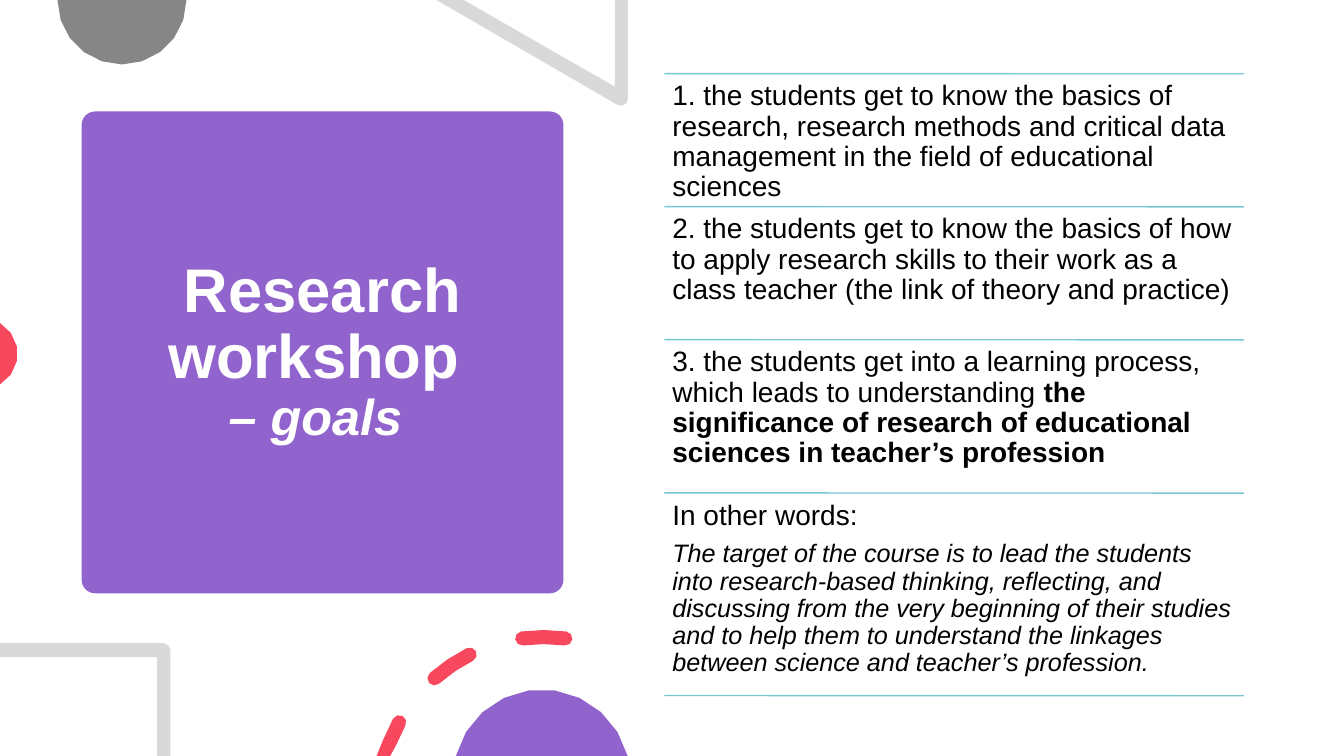
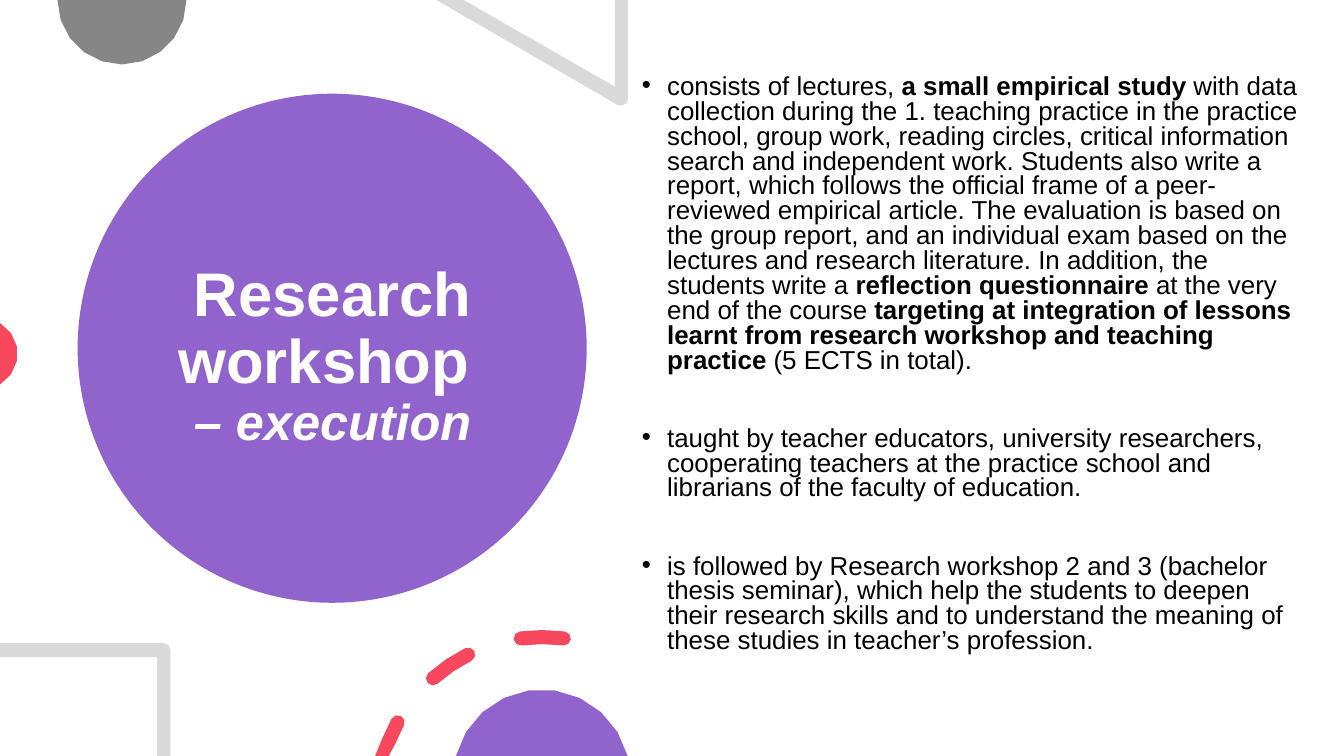
from itertools import accumulate
from math import ceil, cos, radians, sin, sqrt

from lxml.etree import SubElement
from pptx import Presentation
from pptx.dml.color import RGBColor
from pptx.enum.shapes import MSO_CONNECTOR as Connector, MSO_SHAPE as Preset
from pptx.enum.text import MSO_ANCHOR as Anchor, PP_ALIGN as Align
from pptx.oxml.ns import qn
from pptx.util import Inches, Pt

# Grid: one cell is a tenth of an inch, 133.33 columns by 75 rows.
CELL = Inches(0.1)
COLUMNS, ROWS = 133.33, 75

FONT = "Arial"
BLACK = RGBColor(0x00, 0x00, 0x00)
WHITE = RGBColor(0xFF, 0xFF, 0xFF)
PURPLE = RGBColor(0x90, 0x63, 0xCD)
RED = RGBColor(0xF8, 0x48, 0x5E)
GREY = RGBColor(0x86, 0x86, 0x86)
PALE_GREY = RGBColor(0xD9, 0xD9, 0xD9)
TEAL = RGBColor(0x78, 0xC8, 0xD2)

BULLET_INDENT = 2.5
RULE_TILT = 0.02
GOALS = [
    (13.2, [[("1. the students get to know the basics of research, research methods "
              "and critical data management in the field of educational sciences", {})]]),
    (13.2, [[("2. the students get to know the basics of how to apply research skills to "
              "their work as a class teacher (the link of theory and practice)", {})]]),
    (15.2, [[("3. the students get into a learning process, which leads to understanding ", {}),
             ("the significance of research of educational sciences in teacher’s profession",
              {"bold": True})]]),
    (20.1, [[("In other words:", {})],
            [("The target of the course is to lead the students into research-based thinking, "
              "reflecting, and discussing from the very beginning of their studies and to help "
              "them to understand the linkages between science and teacher’s profession.",
              {"size": 18, "italic": True})]]),
]
EXECUTION = [
    [("consists of lectures, ", {}),
     ("a small empirical study ", {"bold": True}),
     ("with data collection during the 1. teaching practice in the practice school, group work, "
      "reading circles, critical information search and independent work. Students also write a "
      "report, which follows the official frame of a peer-reviewed empirical article. The "
      "evaluation is based on the group report, and an individual exam based on the lectures and "
      "research literature. In addition, the students write a ", {}),
     ("reflection questionnaire ", {"bold": True}),
     ("at the very end of the course ", {}),
     ("targeting at integration of lessons learnt from research workshop and teaching practice ",
      {"bold": True}),
     ("(5 ECTS in total).", {})],
    [("taught by teacher educators, university researchers, cooperating teachers at the practice "
      "school and librarians of the faculty of education.", {})],
    [("is followed by Research workshop 2 and 3 (bachelor thesis seminar), which help the "
      "students to deepen their research skills and to understand the meaning of these studies "
      "in teacher’s profession.", {})],
]


def cells(*counts):
    return [round(count * CELL) for count in counts]


def arc(x, y, radius, start, end):
    """Points on a circle, angles in degrees, clockwise; larger circles get finer steps."""
    steps = max(1, ceil(abs(end - start) * sqrt(radius) / 50))
    angles = [radians(start + (end - start) * step / steps) for step in range(steps + 1)]
    return [(x + radius * cos(angle), y + radius * sin(angle)) for angle in angles]


def dash(x, y, radius, start, end, half=0.7):
    """Round-ended piece of a ring, cut off at the foot of the slide."""
    first, *_, last = arc(x, y, radius, start, end)
    outline = arc(*last, half, end, end + 180) + arc(*first, half, start + 180, start + 360)
    outline[:0] = arc(x, y, radius + half, start, end)[1:-1]
    middle = len(outline) - len(arc(*first, half, start + 180, start + 360))
    outline[middle:middle] = arc(x, y, radius - half, end, start)[1:-1]
    return [(column, min(row, ROWS)) for column, row in outline]


def write(para, text, *, size, color=BLACK, bold=False, italic=False):
    """Adds a span; each newline becomes a line break."""
    for index, part in enumerate(text.split("\n")):
        if index:
            para.add_line_break()
        if part:
            span = para.add_run()
            span.text = part
            font = span.font
            font.name, font.size, font.color.rgb = FONT, Pt(size), color
            font.bold, font.italic = bold, italic


class Workshop:
    def __init__(self):
        self.deck = Presentation()
        self.deck.slide_width, self.deck.slide_height = cells(COLUMNS, ROWS)
        self.page = None

    def add_page(self):
        self.page = self.deck.slides.add_slide(self.deck.slide_layouts[6])

    def paint(self, shape, color):
        shape.shadow.inherit = False
        shape.fill.solid()
        shape.fill.fore_color.rgb = color
        shape.line.fill.background()

    def panel(self, preset, *place, corner=None):
        shape = self.page.shapes.add_shape(preset, *cells(*place))
        if corner is not None:
            shape.adjustments[0] = corner
        self.paint(shape, PURPLE)

    def outline(self, color, *contours):
        first, *others = [[cells(*point) for point in contour] for contour in contours]
        builder = self.page.shapes.build_freeform(*first[0])
        builder.add_line_segments(first[1:])
        for contour in others:
            builder.move_to(*contour[0])
            builder.add_line_segments(contour[1:])
        self.paint(builder.convert_to_shape(), color)

    def rule(self, left, right, row):
        line = self.page.shapes.add_connector(
            Connector.STRAIGHT, *cells(left, row, right, row + RULE_TILT))
        line.line.color.rgb = TEAL
        line.line.width = Pt(1)
        SubElement(line._element.spPr, qn("a:effectLst"))

    def text(self, paragraphs, *place, size, color=BLACK, bold=False, spacing=0.9, before=0,
             after=0, align=Align.LEFT, anchor=Anchor.TOP, inset=None, bullets=False):
        frame = self.page.shapes.add_textbox(*cells(*place)).text_frame
        frame.word_wrap = True
        frame.vertical_anchor = anchor
        if inset is not None:
            frame.margin_left = frame.margin_right = cells(inset)[0]
            frame.margin_top = frame.margin_bottom = cells(inset)[0]
        for index, spans in enumerate(paragraphs):
            para = frame.add_paragraph() if index else frame.paragraphs[0]
            if bullets:
                props = para._p.get_or_add_pPr()
                indent = cells(BULLET_INDENT)[0]
                props.set("marL", str(indent))
                props.set("indent", str(-indent))
                SubElement(props, qn("a:buFont"), typeface=FONT)
                SubElement(props, qn("a:buChar"), char="•")
            para.alignment = align
            para.line_spacing = spacing
            para.space_before = Pt(before if index else 0)
            para.space_after = Pt(after)
            for words, changes in spans:
                write(para, words, **{"size": size, "color": color, "bold": bold, **changes})

    def title(self, name, subtitle, *place):
        self.text([[(name, {}), (subtitle, {"size": 36, "italic": True})]], *place, size=44,
                  color=WHITE, bold=True, align=Align.CENTER, anchor=Anchor.MIDDLE)

    def decorate_top(self):
        """Shapes that run off the top and left edges."""
        self.outline(GREY, arc(12.1, 0, 6.4, 0, 180))
        self.outline(PALE_GREY, [(62.3, 0), (61, 0), (61, 8.6), (46, 0), (43.3, 0),
                                 *arc(61.6, 9.8, 0.7, 120, 0)])
        self.outline(RED, arc(-1.78, 35.1, 3.53, -59.7, 59.7))

    def decorate_foot(self, ring_x):
        """Shapes that run off the bottom edge."""
        self.outline(PALE_GREY, [(0, 63.8), (0, 65.2), (15.6, 65.2), (15.6, ROWS), (16.9, ROWS),
                                 *arc(16.2, 64.5, 0.7, 0, -90)])
        self.outline(RED, *[dash(ring_x, 79.6, 16.4, start, end)
                            for start, end in [(194, 209), (228.6, 243.4), (262.5, 277.5)]])
        self.outline(PURPLE, arc(53.75, 77.2, 8.8, 194.5, 345.5))

    def goals(self):
        self.add_page()
        self.panel(Preset.ROUNDED_RECTANGLE, 8.1, 11.06, 47.8, 47.8, corner=0.028)
        self.title("Research workshop \n", "– goals ", 10.45, 12.2, 43.1, 45.6)
        self.decorate_top()
        left, width = 65.9, 57.5
        edges = list(accumulate([height for height, _ in GOALS], initial=7.3))
        for row in edges:
            self.rule(left, left + width, row)
        for row, (height, paragraphs) in zip(edges, GOALS):
            self.text(paragraphs, left, row, width, height, size=20, after=7, inset=0.8)
        self.decorate_foot(53.95)

    def execution(self):
        self.add_page()
        self.panel(Preset.OVAL, 7.7, 9.3, 50.5, 50.5)
        self.title("Research\nworkshop \n", "– execution", 11.45, 13.2, 43.1, 44.5)
        self.decorate_top()
        self.text(EXECUTION, 62.7, 7, 67.8, 68, size=18.5, spacing=0.8, before=38, bullets=True)
        self.decorate_foot(53.8)


def main():
    workshop = Workshop()
    workshop.goals()
    workshop.execution()
    workshop.deck.save("out.pptx")


if __name__ == "__main__":
    main()
